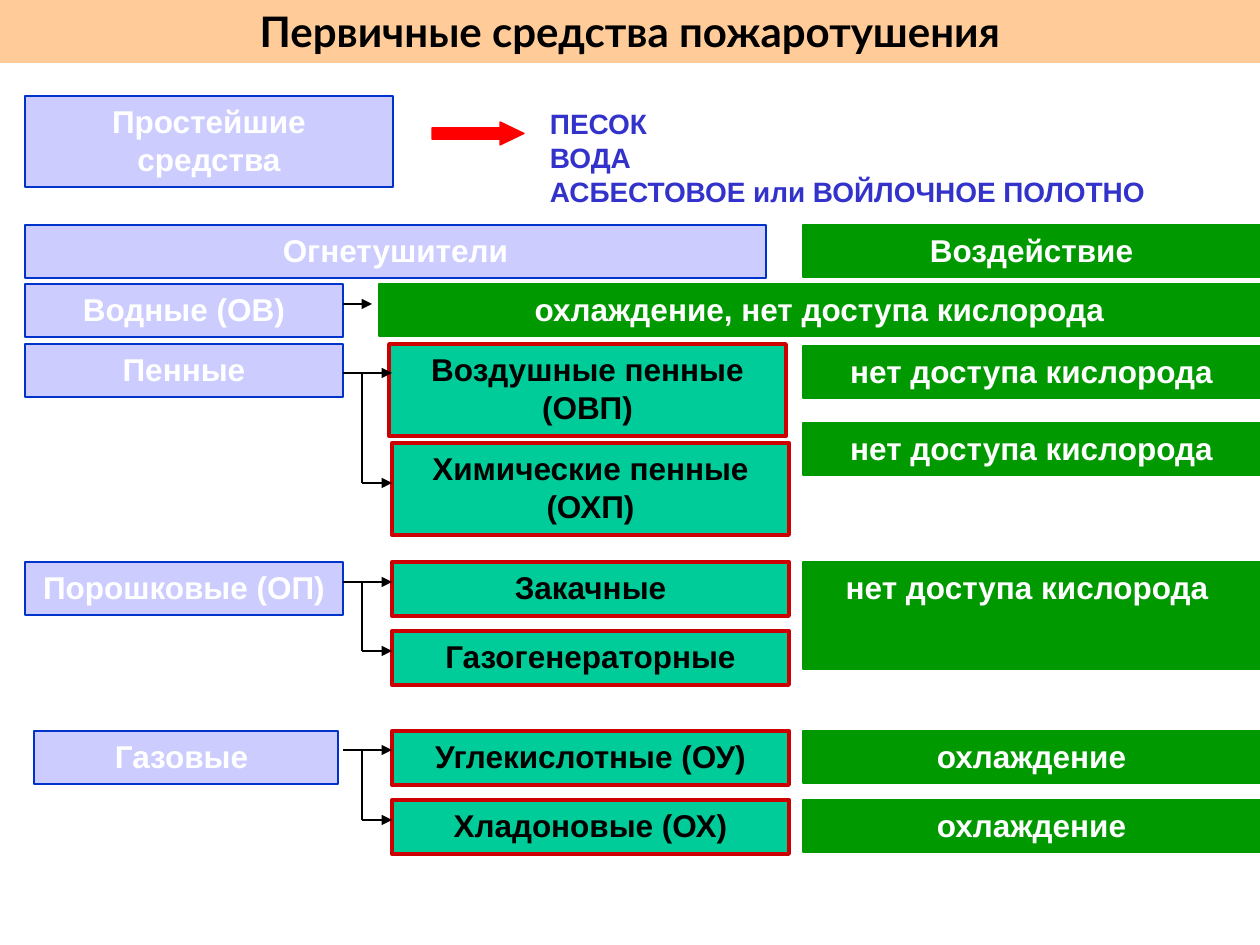
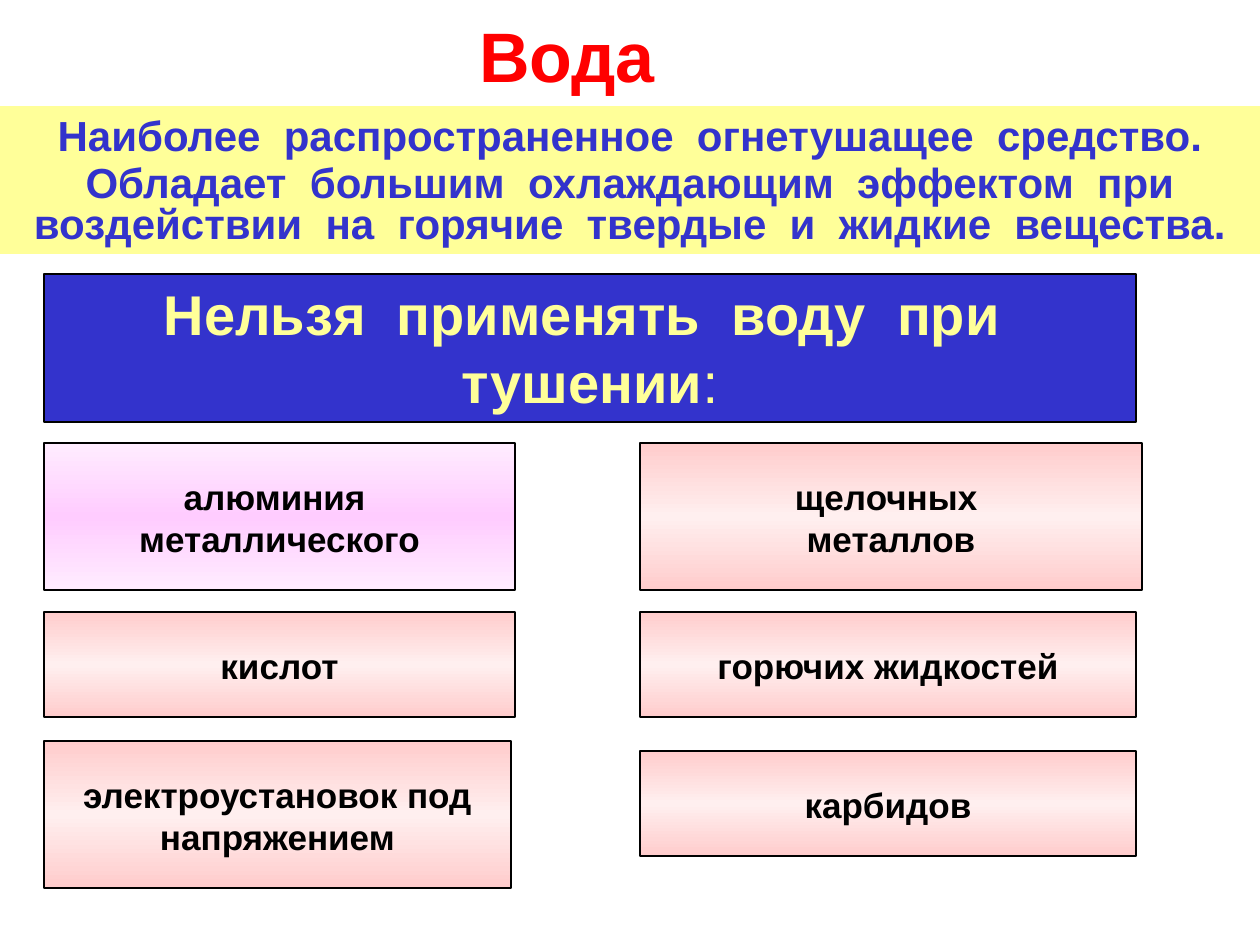
from copy import deepcopy
from pptx import Presentation, util as u
from pptx.dml.color import RGBColor
from pptx.enum import shapes, text
from pptx.oxml.ns import qn
from pptx.oxml.xmlchemy import OxmlElement

PX = 914400 / 126
WIDE, HIGH = 1260, 945
RECT = shapes.MSO_SHAPE.RECTANGLE
ARROW = shapes.MSO_SHAPE.RIGHT_ARROW
CENTER, JUST = text.PP_ALIGN.CENTER, text.PP_ALIGN.JUSTIFY

# Theme: fill (three colours make a gradient), line, line width, font format
ROSE = ("FFCCCC", "FFEFEF", "FFCCCC")
PINK = ("FFECFF", "FFCCFF", "FFECFF")
CARD = dict(line="000000", width=0.75, size=20, color="000000", inset=(32, 32, 32, 32))
THEME = {
    "band": dict(fill="FFCC99", size=24, color="000000", font="Lato"),
    "list": dict(size=16, color="3333CC", align=JUST),
    "class": dict(fill="CCCCFF", line="0033CC", width=1.5, size=18, color="FFFFFF"),
    "type": dict(fill="00CC99", line="CC0000", width=2.25, size=18, color="000000"),
    "effect": dict(fill="009900", line="009900", width=0.75, size=18, color="FFFFFF"),
    "arrow": dict(fill="FF0000", line="FF0000", width=0.75),
    "title": dict(size=40, color="FF0000", inset=(13, 12, 13, 0),
                  anchor=text.MSO_ANCHOR.MIDDLE),
    "lead": dict(fill="FFFF99", size=24, color="3333CC", inset=(13, 13, 13, 6),
                 para=dict(line_spacing=0.8), gap=4.1),
    "ban": dict(fill="3333CC", line="000000", width=0.75, size=32, color="FFFF99"),
    "rose": dict(CARD, fill=ROSE),
    "pink": dict(CARD, fill=PINK),
}

# Slide 1 content: text, left, top, width, height
COL1, COL2, COL3 = 25, 392, 803
W1, W2, W3 = 318, 397, WIDE - COL3
H1, H2, H3 = 53, 54, 52
MEANS = {
    "band": [("Первичные средства пожаротушения", 0, 0, WIDE, 63)],
    "list": [("ПЕСОК\nВОДА \nАСБЕСТОВОЕ или ВОЙЛОЧНОЕ ПОЛОТНО", 537, 101, 674, 113)],
    "arrow": [("", 432, 122, 92, 23)],
    "type": [
        ("Воздушные пенные (ОВП)", 389, 344, W2, 92),
        ("Химические пенные (ОХП)", COL2, 443, W2, 92),
        ("Закачные", COL2, 562, W2, H2),
        ("Газогенераторные", COL2, 631, W2, H2),
        ("Углекислотные (ОУ)", COL2, 731, W2, H2),
        ("Хладоновые (ОХ)", COL2, 800, W2, H2),
    ],
    "effect": [
        ("Воздействие", COL3, 225, W3, H3),
        ("охлаждение, нет доступа кислорода", 379, 284, WIDE - 379, H3),
        ("нет доступа кислорода", COL3, 346, W3, H3),
        ("нет доступа кислорода", COL3, 423, W3, H3),
        ("нет доступа кислорода ", COL3, 562, W3, 107),
        ("охлаждение", COL3, 731, W3, H3),
        ("охлаждение", COL3, 800, W3, H3),
    ],
    "class": [
        ("Газовые ", 34, 731, 304, H1),
        ("Порошковые (ОП)", COL1, 562, W1, H1),
        ("Пенные", COL1, 344, W1, H1),
        ("Водные (ОВ)", COL1, 284, W1, H1),
        ("Простейшие средства", COL1, 96, 368, 91),
        ("Огнетушители", COL1, 225, 741, H1),
    ],
}
FORKS = [(373, 483), (582, 651), (750, 820)]
STEM = 362

# Slide 2 content
LEFT, RIGHT = 44, 640
WATER = {
    "title": [("Вода", 0, 0, 1134, 98)],
    "lead": [("Наиболее  распространенное  огнетушащее  средство.\n"
              "Обладает  большим  охлаждающим  эффектом  при воздействии  "
              "на  горячие  твердые  и  жидкие  вещества.", 0, 106, WIDE, 148)],
    "ban": [("Нельзя  применять  воду  при  тушении", LEFT, 274, 1092, 148)],
    "pink": [("алюминия \nметаллического", LEFT, 443, 471, 147)],
    "rose": [
        ("щелочных \nметаллов", RIGHT, 443, 502, 147),
        ("кислот", LEFT, 612, 471, 105),
        ("горючих жидкостей", RIGHT, 612, 496, 105),
        ("электроустановок под напряжением", LEFT, 741, 467, 147),
        ("карбидов", RIGHT, 751, 496, 105),
    ],
}


def px(*vals):
    return [u.Emu(round(v * PX)) for v in vals]


def assign(obj, **vals):
    for key, val in vals.items():
        setattr(obj, key, val)


def rgb(code):
    return RGBColor.from_string(code)


def paint(shp, fill):
    if isinstance(fill, str):
        shp.fill.solid()
        shp.fill.fore_color.rgb = rgb(fill)
        return
    shp.fill.gradient()
    shp.fill.gradient_angle = 270
    stops = shp._element.spPr.find(".//" + qn("a:gsLst"))
    stops.append(deepcopy(stops[0]))
    for i, (stop, code) in enumerate(zip(shp.fill.gradient_stops, fill)):
        stop.position = i / 2
        stop.color.rgb = rgb(code)


def style(run, look, bold=True):
    assign(run.font, name=look.get("font", "Arial"), size=u.Pt(look["size"]), bold=bold)
    run.font.color.rgb = rgb(look["color"])


def write(shp, words, look):
    frame = shp.text_frame
    sides = px(*look.get("inset", (13, 6, 13, 6)))
    names = ("margin_left", "margin_top", "margin_right", "margin_bottom")
    assign(frame, word_wrap=True, **dict(zip(names, sides)),
           vertical_anchor=look.get("anchor", text.MSO_ANCHOR.TOP))
    for i, line in enumerate(words.split("\n")):
        para = frame.add_paragraph() if i else frame.paragraphs[0]
        assign(para, alignment=look.get("align", CENTER), **look.get("para", {}))
        if i and "gap" in look:
            para.space_before = u.Pt(look["gap"])
        run = para.add_run()
        run.text = line
        style(run, look)


def block(slide, kind, words, *box):
    look = THEME[kind]
    if "fill" in look:
        shp = slide.shapes.add_shape(ARROW if kind == "arrow" else RECT, *px(*box))
        shp.shadow.inherit = False
        paint(shp, look["fill"])
        if "line" in look:
            shp.line.color.rgb = rgb(look["line"])
            shp.line.width = u.Pt(look["width"])
        else:
            shp.line.fill.background()
    else:
        shp = slide.shapes.add_textbox(*px(*box))
    if words:
        write(shp, words, look)
    return shp


def link(slide, x1, y1, x2, y2, head=True):
    line = slide.shapes.add_connector(shapes.MSO_CONNECTOR.STRAIGHT, *px(x1, y1, x2, y2))
    line.line.color.rgb = rgb("000000")
    line.line.width = u.Pt(0.75)
    if head:
        tip = OxmlElement("a:tailEnd")
        tip.set("type", "triangle")
        line.line._get_or_add_ln().append(tip)
    line._element.spPr.append(OxmlElement("a:effectLst"))


def build(deck, parts):
    slide = deck.slides.add_slide(deck.slide_layouts[6])
    made = {kind: [block(slide, kind, *row) for row in rows]
            for kind, rows in parts.items()}
    return slide, made


def main():
    deck = Presentation()
    deck.slide_width, deck.slide_height = px(WIDE, HIGH)

    # Extinguisher classes and their branches
    slide, made = build(deck, MEANS)
    made["arrow"][0].adjustments[1] = 1.04
    edge = COL1 + W1
    link(slide, edge, 304, 372, 304)
    for top, low in FORKS:
        link(slide, edge, top, COL2, top)
        link(slide, STEM, low, COL2, low)
        link(slide, STEM, top, STEM, low, head=False)

    # Water: the heading ends with a light colon
    slide, made = build(deck, WATER)
    colon = made["ban"][0].text_frame.paragraphs[0].add_run()
    colon.text = ":"
    style(colon, THEME["ban"], bold=False)

    deck.save("out.pptx")


if __name__ == "__main__":
    main()
